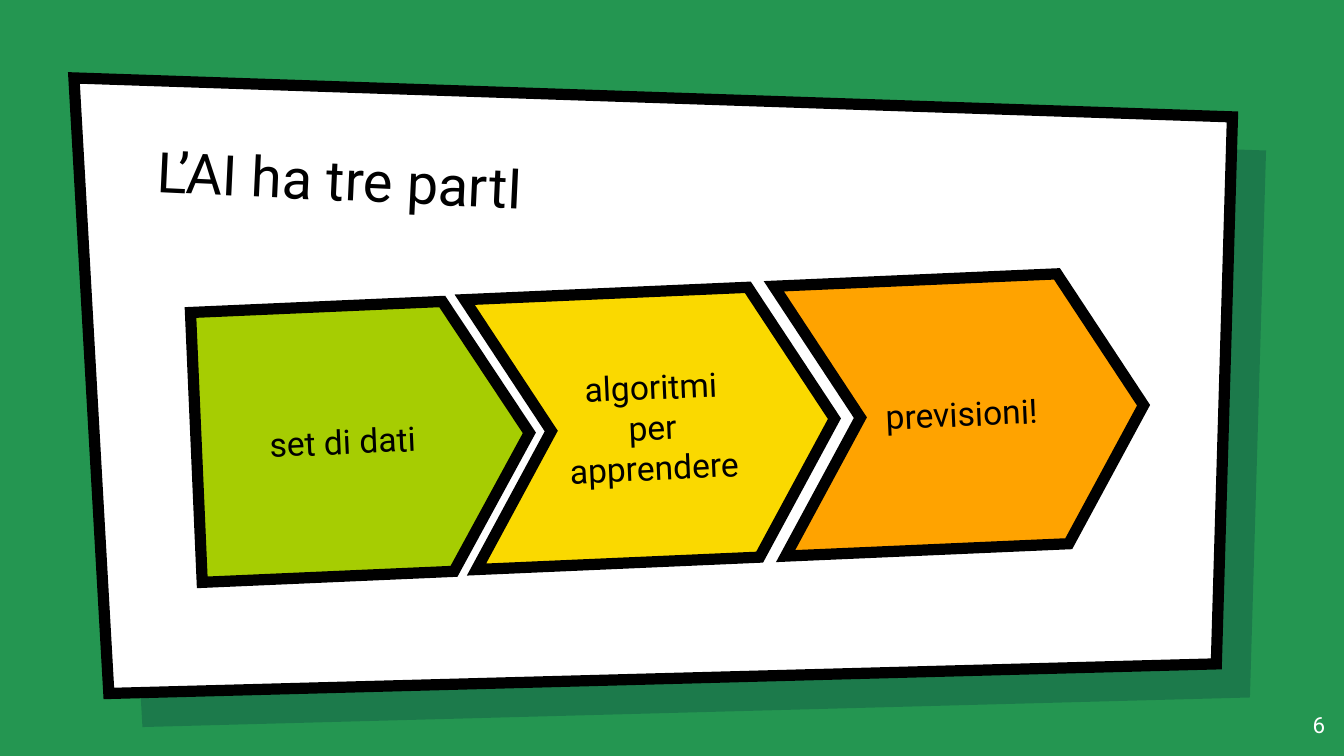
from lxml import etree
from pptx import Presentation
from pptx import util as u
from pptx.dml.color import RGBColor
from pptx.enum import shapes, text
from pptx.oxml.ns import qn

FONT = "Roboto"
COLORS = {
    "background": "249651", "shadow": "001936", "panel": "FFFFFF", "ink": "000000",
    "data": "A6CD02", "algorithms": "FAD900", "predictions": "FFA300", "number": "FFFFFF",
}
TITLE = "L’AI ha tre partI"
PAGE = "6"
Shape = shapes.MSO_SHAPE
# label, colour, preset, point depth, left, width
STEPS = [
    ("set di dati", "data", Shape.PENTAGON, 0.301, 1.46, 2.48),
    ("algoritmi per apprendere", "algorithms", Shape.CHEVRON, 0.299, 3.5, 2.71),
    ("previsioni!", "predictions", Shape.CHEVRON, 0.299, 5.8, 2.71),
]
STEP_TOP, STEP_RISE, STEP_HEIGHT, STEP_TILT = 2.27, 0.1, 2.01, 357.5
PANEL = [(0.55, 0.58), (9.17, 0.87), (9.05, 4.94), (0.81, 5.16)]
SHADOW_OFFSET = 0.25
LEFT, CENTER, RIGHT = text.PP_ALIGN.LEFT, text.PP_ALIGN.CENTER, text.PP_ALIGN.RIGHT
TOP, MIDDLE, BOTTOM = text.MSO_ANCHOR.TOP, text.MSO_ANCHOR.MIDDLE, text.MSO_ANCHOR.BOTTOM


def rgb(name):
    return RGBColor.from_string(COLORS[name])


def paint(shape, fill, outlined=True):
    shape.shadow.inherit = False
    shape.fill.solid()
    shape.fill.fore_color.rgb = rgb(fill)
    if not outlined:
        shape.line.fill.background()
        return
    shape.line.color.rgb = rgb("ink")
    shape.line.width = u.Pt(6)
    outline = shape.line.fill._xPr
    etree.SubElement(outline, qn("a:miter"), lim="800000")


def write(shape, words, size, color="ink", align=CENTER, anchor=MIDDLE):
    frame = shape.text_frame
    inset = u.Inches(0.1)
    layout = {"word_wrap": True, "auto_size": text.MSO_AUTO_SIZE.NONE,
              "vertical_anchor": anchor, "margin_left": inset, "margin_right": inset,
              "margin_top": inset, "margin_bottom": inset}
    for key, value in layout.items():
        setattr(frame, key, value)
    paragraph = frame.paragraphs[0]
    paragraph.alignment = align
    run = paragraph.add_run()
    run.text = words
    for key, value in {"name": FONT, "size": u.Pt(size), "bold": False}.items():
        setattr(run.font, key, value)
    run.font.color.rgb = rgb(color)


def add_panel(slide, offset, fill, outlined):
    corners = [(u.Inches(x + offset), u.Inches(y + offset)) for x, y in PANEL]
    builder = slide.shapes.build_freeform(*corners[0])
    builder.add_line_segments(corners[1:], close=True)
    panel = builder.convert_to_shape()
    paint(panel, fill, outlined)
    return panel


# Widescreen slide, 16 to 9
prs = Presentation()
prs.slide_width, prs.slide_height = u.Inches(10), u.Inches(10 * 9 / 16)
slide = prs.slides.add_slide(prs.slide_layouts[5])
slide.background.fill.solid()
slide.background.fill.fore_color.rgb = rgb("background")

# Tilted panel over its translucent shadow
shadow = add_panel(slide, SHADOW_OFFSET, "shadow", False)
shadow_color = shadow.fill._xPr.find(qn("a:solidFill"))[0]
etree.SubElement(shadow_color, qn("a:alpha"), val="22000")
add_panel(slide, 0, "panel", True)

# Title, moved in front of the panel
title = slide.shapes.title
slide.shapes._spTree.append(title._element)
place = {"left": 1.07, "top": 0.96, "width": 7.69, "height": 0.83}
for key, value in place.items():
    setattr(title, key, u.Inches(value))
title.rotation = 2.7
write(title, TITLE, 30, align=LEFT, anchor=BOTTOM)

# Rising row of arrows
for index, (label, color, preset, depth, left, width) in enumerate(STEPS):
    box = (left, STEP_TOP - index * STEP_RISE, width, STEP_HEIGHT)
    step = slide.shapes.add_shape(preset, *map(u.Inches, box))
    step.adjustments[0] = depth
    step.rotation = STEP_TILT
    paint(step, color)
    write(step, label, 18)

# Page number
number = slide.shapes.add_textbox(*map(u.Inches, (9.36, 5.19, 0.6, 0.43)))
write(number, PAGE, 12, "number", RIGHT, TOP)

prs.save("out.pptx")
